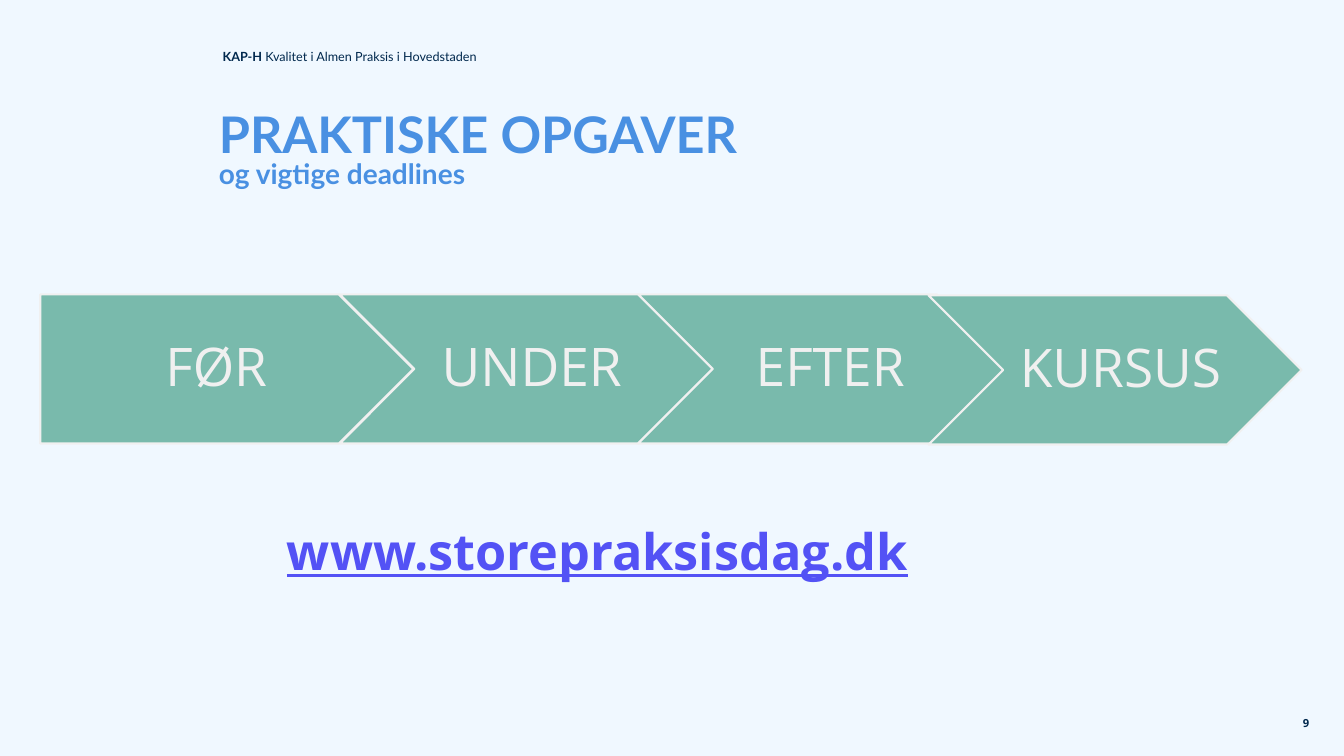
import pptx
import pptx.util
import pptx.dml.color
import pptx.enum.shapes
import pptx.enum.text

Inches, Pt = pptx.util.Inches, pptx.util.Pt
SHAPE = pptx.enum.shapes.MSO_SHAPE
ALIGN = pptx.enum.text.PP_ALIGN
ANCHOR = pptx.enum.text.MSO_ANCHOR
COLORS = {
    "background": "F0F8FF",
    "navy": "00284D",
    "title": "4990E2",
    "step": "79BAAC",
    "light": "F0F0F0",
    "link": "5352F5",
}


def color(name):
    return pptx.dml.color.RGBColor.from_string(COLORS[name])


def style(tf, font, size, color_name, bold=False, align=ALIGN.LEFT,
          anchor=ANCHOR.TOP, insets=(0.1, 0.05, 0.1, 0.05)):
    """Format a whole text frame; insets run left, top, right, bottom."""
    tf.vertical_anchor = anchor
    tf.margin_left, tf.margin_top, tf.margin_right, tf.margin_bottom = map(Inches, insets)
    for p in tf.paragraphs:
        p.alignment = align
        for r in p.runs:
            r.font.name = font
            r.font.size = Pt(size)
            r.font.bold = bold
            r.font.color.rgb = color(color_name)


prs = pptx.Presentation()
prs.slide_width, prs.slide_height = Inches(13.33), Inches(7.5)
s = prs.slides.add_slide(prs.slide_layouts[5])
s.background.fill.solid()
s.background.fill.fore_color.rgb = color("background")

# Title with a smaller second line
title = s.shapes.title
title.left, title.top = Inches(2.17), Inches(0.93)
title.width, title.height = Inches(9), Inches(1.25)
tf = title.text_frame
tf.text = "PRAKTISKE OPGAVER\vog vigtige deadlines"
tf.word_wrap = True
tf.auto_size = pptx.enum.text.MSO_AUTO_SIZE.NONE
style(tf, "Lato", 36, "title", bold=True, insets=(0, 0.21, 0, 0))
p = tf.paragraphs[0]
p.line_spacing = 0.8
p.runs[1].font.size = Pt(20)

# Header
header = s.shapes.add_textbox(Inches(2.11), Inches(0.44), Inches(4.92), Inches(0.25))
tf = header.text_frame
tf.word_wrap = True
p = tf.paragraphs[0]
for text in ("KAP-H", " Kvalitet i Almen Praksis i Hovedstaden"):
    p.add_run().text = text
style(tf, "Lato", 9, "navy")
p.runs[0].font.bold = True

# Process arrows
steps = [
    ("FØR", SHAPE.PENTAGON, 0.4, 2.92, 0.22),
    ("UNDER", SHAPE.CHEVRON, 3.37, 2.92, 0.17),
    ("EFTER", SHAPE.CHEVRON, 6.33, 2.92, 0.17),
    ("KURSUS", SHAPE.CHEVRON, 9.21, 2.93, 0.17),
]
for text, kind, left, top, inset in steps:
    sp = s.shapes.add_shape(kind, Inches(left), Inches(top), Inches(3.7), Inches(1.48))
    sp.shadow.inherit = False
    sp.fill.solid()
    sp.fill.fore_color.rgb = color("step")
    sp.line.color.rgb = color("light")
    sp.line.width = Pt(1.5)
    tf = sp.text_frame
    tf.text = text
    tf.word_wrap = False
    style(tf, "Open Sans", 38, "light", align=ALIGN.CENTER, anchor=ANCHOR.MIDDLE,
          insets=(inset, 0.11, 0.06, 0.11))
    tf.paragraphs[0].line_spacing = 0.9

# Web address
address = s.shapes.add_textbox(Inches(1.45), Inches(4.98), Inches(9.19), Inches(0.8))
tf = address.text_frame
tf.text = "www.storepraksisdag.dk"
tf.word_wrap = True
style(tf, "Open Sans", 36, "link", bold=True, align=ALIGN.CENTER,
      insets=(0, 0.18, 0.24, 0.04))
tf.paragraphs[0].runs[0].font.underline = True

# Slide number
number = s.shapes.add_textbox(Inches(12.59), Inches(6.97), Inches(0.73), Inches(0.4))
tf = number.text_frame
tf.text = "9"
tf.word_wrap = True
style(tf, "Open Sans", 8, "navy", bold=True, align=ALIGN.CENTER, anchor=ANCHOR.MIDDLE)

prs.save("out.pptx")
